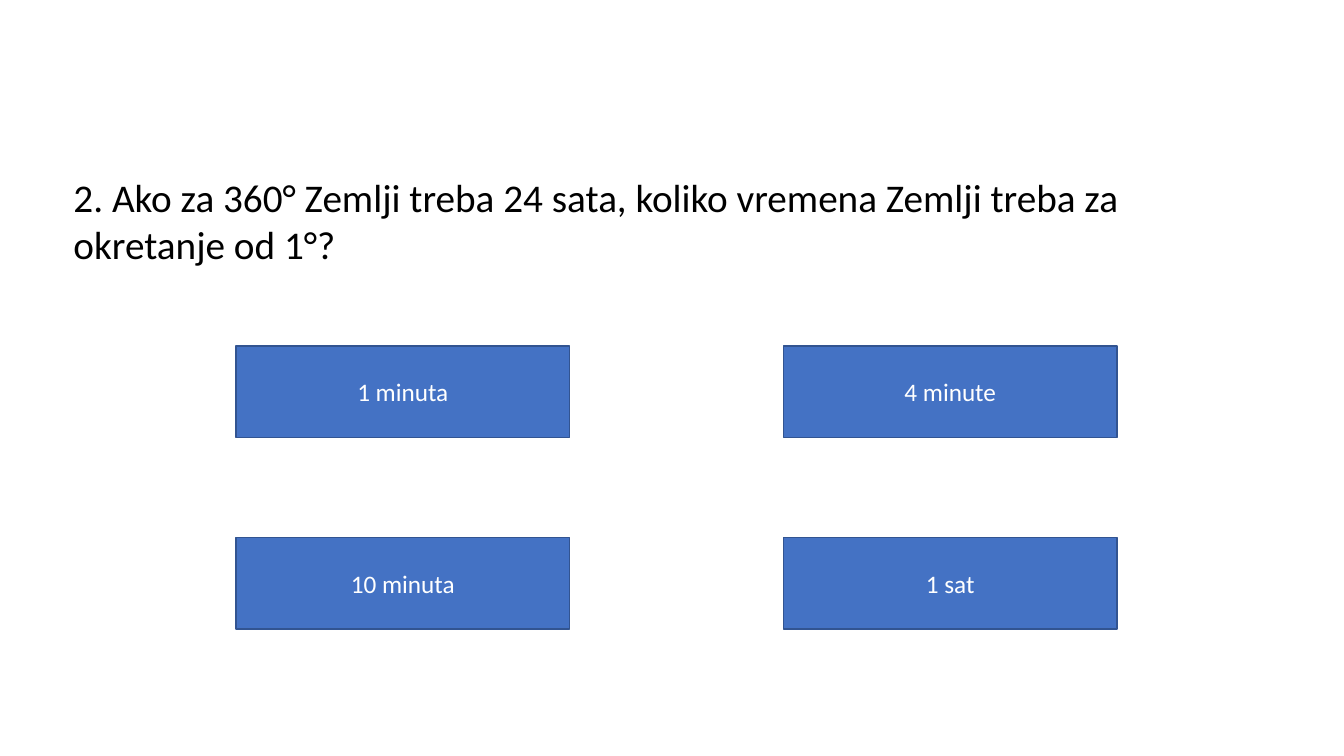
from dataclasses import dataclass

from pptx import Presentation
from pptx.dml.color import RGBColor
from pptx.enum.shapes import MSO_SHAPE
from pptx.enum.text import MSO_ANCHOR, MSO_AUTO_SIZE, PP_ALIGN
from pptx.slide import Slide
from pptx.text.text import TextFrame
from pptx.util import Pt

RECTANGLE = MSO_SHAPE.RECTANGLE
MIDDLE = MSO_ANCHOR.MIDDLE
GROW_TO_FIT = MSO_AUTO_SIZE.SHAPE_TO_FIT_TEXT
CENTER = PP_ALIGN.CENTER


@dataclass(frozen=True)
class Theme:
    font: str = "Calibri"
    question_size: float = 28
    answer_size: float = 18
    question_color: RGBColor = RGBColor(0x00, 0x00, 0x00)
    answer_color: RGBColor = RGBColor(0xFF, 0xFF, 0xFF)
    answer_fill: RGBColor = RGBColor(0x44, 0x72, 0xC4)
    answer_border: RGBColor = RGBColor(0x32, 0x54, 0x91)
    border_width: float = 1


@dataclass(frozen=True)
class Answer:
    text: str
    column: int
    row: int


THEME = Theme()
QUESTION = (
    "2. Ako za 360° Zemlji treba 24 sata, koliko vremena Zemlji treba "
    "za okretanje od 1°?"
)
ANSWERS = [
    Answer("1 minuta", 0, 0),
    Answer("4 minute", 1, 0),
    Answer("10 minuta", 0, 1),
    Answer("1 sat", 1, 1),
]

GRID_LEFT, GRID_TOP = 168.5, 247
COLUMN_STEP, ROW_STEP = 391, 136.8
ANSWER_WIDTH, ANSWER_HEIGHT = 238.5, 65.5


def add_run(frame: TextFrame, text: str, size: float, color: RGBColor) -> None:
    run = frame.paragraphs[0].add_run()
    run.text = text
    run.font.name = THEME.font
    run.font.size = Pt(size)
    run.font.color.rgb = color


def add_answer(slide: Slide, answer: Answer) -> None:
    button = slide.shapes.add_shape(
        RECTANGLE,
        Pt(GRID_LEFT + answer.column * COLUMN_STEP),
        Pt(GRID_TOP + answer.row * ROW_STEP),
        Pt(ANSWER_WIDTH),
        Pt(ANSWER_HEIGHT),
    )
    button.shadow.inherit = False
    button.fill.solid()
    button.fill.fore_color.rgb = THEME.answer_fill
    button.line.color.rgb = THEME.answer_border
    button.line.width = Pt(THEME.border_width)
    frame = button.text_frame
    frame.word_wrap = True
    frame.vertical_anchor = MIDDLE
    frame.paragraphs[0].alignment = CENTER
    add_run(frame, answer.text, THEME.answer_size, THEME.answer_color)


def add_question(slide: Slide) -> None:
    question = slide.shapes.add_textbox(Pt(45.4), Pt(120.2), Pt(850.3), Pt(75))
    frame = question.text_frame
    frame.word_wrap = True
    frame.auto_size = GROW_TO_FIT
    add_run(frame, QUESTION, THEME.question_size, THEME.question_color)


def main() -> None:
    presentation = Presentation()
    presentation.slide_width = Pt(960)
    presentation.slide_height = Pt(540)
    slide = presentation.slides.add_slide(presentation.slide_layouts[6])
    for answer in ANSWERS:
        add_answer(slide, answer)
    add_question(slide)
    presentation.save("out.pptx")


if __name__ == "__main__":
    main()
